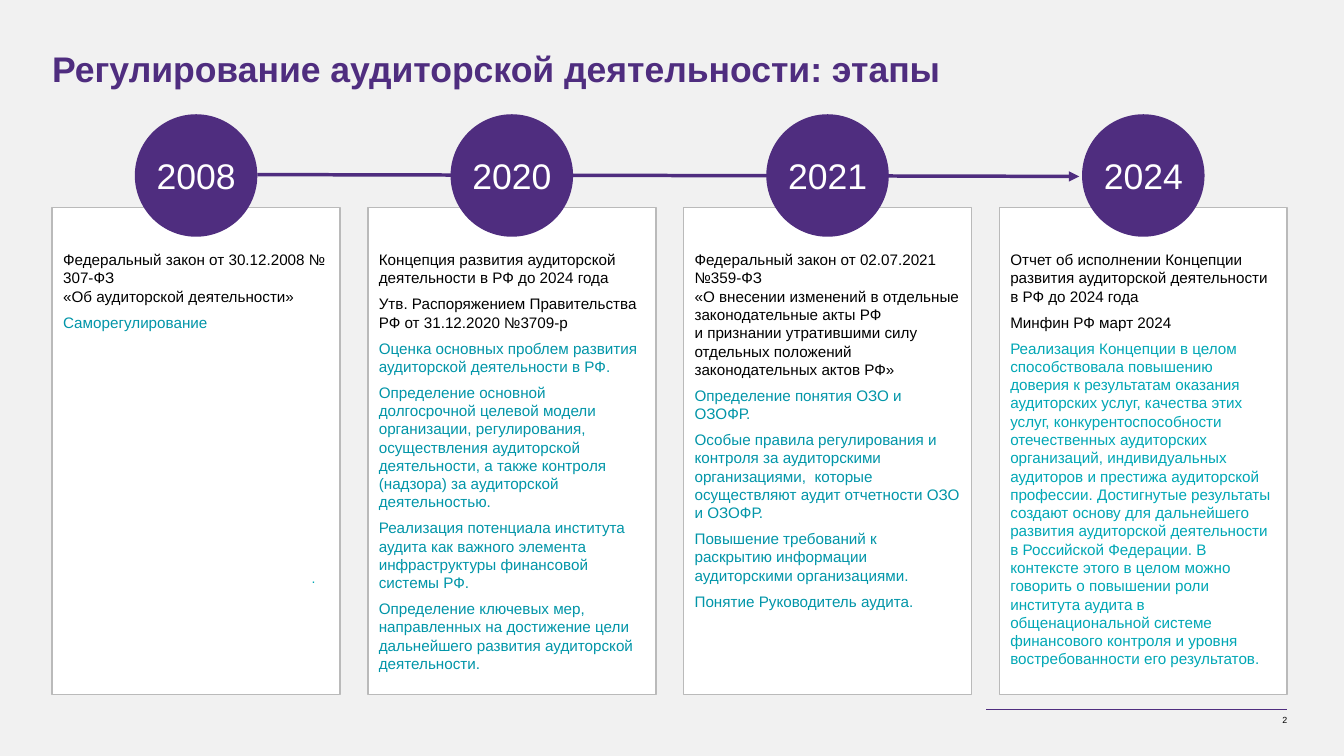
from copy import deepcopy

from pptx import Presentation
from pptx import util as u
from pptx.dml.color import RGBColor
from pptx.enum import shapes, text
from pptx.oxml import ns, xmlchemy

VIOLET, TEAL, AQUA = "4F2D7F", "0095A8", "00A7B5"
BLACK, WHITE, GREY, PAPER = "000000", "FFFFFF", "BABABA", "F1F1F1"

TITLE = "Регулирование аудиторской деятельности: этапы"
# year, black lines, coloured lines, their colour
STAGES = [
    ("2008",
     ["Федеральный закон от 30.12.2008 № 307-ФЗ\n«Об аудиторской деятельности»"],
     ["Саморегулирование"], TEAL),
    ("2020",
     ["Концепция развития аудиторской деятельности в РФ до 2024 года",
      "Утв. Распоряжением Правительства РФ от 31.12.2020 №3709-р"],
     ["Оценка основных проблем развития аудиторской деятельности в РФ.",
      "Определение основной долгосрочной целевой модели организации, "
      "регулирования, осуществления аудиторской деятельности, а также "
      "контроля (надзора) за аудиторской деятельностью.",
      "Реализация потенциала института аудита как важного элемента "
      "инфраструктуры финансовой системы РФ.",
      "Определение ключевых мер, направленных на достижение цели "
      "дальнейшего развития аудиторской деятельности."], TEAL),
    ("2021",
     ["Федеральный закон от 02.07.2021 №359-ФЗ\n«О внесении изменений в "
      "отдельные законодательные акты РФ\nи признании утратившими силу "
      "отдельных положений законодательных актов РФ»"],
     ["Определение понятия ОЗО и ОЗОФР.",
      "Особые правила регулирования и контроля за аудиторскими "
      "организациями,  которые осуществляют аудит отчетности ОЗО\nи ОЗОФР.",
      "Повышение требований к \nраскрытию информации\n"
      "аудиторскими организациями.",
      "Понятие Руководитель аудита."], TEAL),
    ("2024",
     ["Отчет об исполнении Концепции развития аудиторской деятельности "
      "в РФ до 2024 года",
      "Минфин РФ март 2024"],
     ["Реализация Концепции в целом способствовала повышению доверия к "
      "результатам оказания аудиторских услуг, качества этих услуг, "
      "конкурентоспособности отечественных аудиторских организаций, "
      "индивидуальных аудиторов и престижа аудиторской профессии. "
      "Достигнутые результаты создают основу для дальнейшего развития "
      "аудиторской деятельности в Российской Федерации. В контексте этого "
      "в целом можно говорить о повышении роли института аудита в "
      "общенациональной системе финансового контроля и уровня "
      "востребованности его результатов."], AQUA),
]

WIDE, HIGH = 14.7, 8.27
LEFT, RIGHT = 0.57, 14.08
CARD, TOP, TALL = 3.15, 2.27, 5.33
STEP = (RIGHT - LEFT - CARD) / (len(STAGES) - 1)
DISC, RISE = 1.34, 1.25
EDGE = (CARD - DISC) / 2


def rgb(code):
    return RGBColor.from_string(code)


def box(at):
    return [u.Inches(n) for n in at]


def write(frame, lines, size=12, bold=False, align="LEFT", anchor="TOP",
          pad=(0, 0, 0, 0), after=6, lead=None):
    """Fill a text frame with (text, colour) lines; pad is left, top, right, bottom."""
    frame.word_wrap = True
    frame.auto_size = text.MSO_AUTO_SIZE.NONE
    frame.vertical_anchor = getattr(text.MSO_ANCHOR, anchor)
    (frame.margin_left, frame.margin_top,
     frame.margin_right, frame.margin_bottom) = box(pad)
    for i, (words, hue) in enumerate(lines):
        para = frame.add_paragraph() if i else frame.paragraphs[0]
        para.text = words
        para.alignment = getattr(text.PP_ALIGN, align)
        para.space_before, para.space_after = u.Pt(0), u.Pt(after)
        if lead:
            para.line_spacing = u.Pt(lead)
        for run in para.runs:
            font = run.font
            font.name, font.size, font.bold = "Arial", u.Pt(size), bold
            font.color.rgb = rgb(hue)
        # line breaks take the size of the text around them
        for gap in para._p.findall(ns.qn("a:br")):
            gap.insert(0, deepcopy(para.runs[0]._r.rPr))


def shape(slide, kind, at, fill, line=None):
    item = slide.shapes.add_shape(kind, *box(at))
    item.shadow.inherit = False
    item.fill.solid()
    item.fill.fore_color.rgb = rgb(fill)
    if line:
        item.line.color.rgb, item.line.width = rgb(line), u.Pt(1.25)
    else:
        item.line.fill.background()
    return item


def rule(slide, ends, width, hue=VIOLET, arrow=False):
    item = slide.shapes.add_connector(shapes.MSO_CONNECTOR.STRAIGHT, *box(ends))
    item.line.color.rgb, item.line.width = rgb(hue), u.Pt(width)
    if arrow:
        tip = xmlchemy.OxmlElement("a:tailEnd")
        tip.set("type", "triangle")
        item.line._get_or_add_ln().append(tip)
    item._element.spPr.append(xmlchemy.OxmlElement("a:effectLst"))


def label(slide, at, words, hue, **style):
    item = slide.shapes.add_textbox(*box(at))
    write(item.text_frame, [(words, hue)], **style)


def main():
    deck = Presentation()
    deck.slide_width, deck.slide_height = box((WIDE, HIGH))
    slide = deck.slides.add_slide(deck.slide_layouts[5])
    slide.background.fill.solid()
    slide.background.fill.fore_color.rgb = rgb(PAPER)

    title = slide.shapes.title
    title.left, title.top, title.width, title.height = box(
        (LEFT, 0.51, RIGHT - LEFT, 0.6))
    write(title.text_frame, [(TITLE, VIOLET)], size=28, bold=True, after=0, lead=34)

    rule(slide, (10.79, 7.76, RIGHT, 7.76), 0.75)
    label(slide, (RIGHT - 0.5, 7.77, 0.5, 0.22), "2", BLACK, size=7,
          align="RIGHT", pad=(0, 0.05, 0, 0.05), after=0)

    start = LEFT + EDGE + DISC
    finish = LEFT + STEP * (len(STAGES) - 1) + EDGE - 0.03
    rule(slide, (start, 1.91, finish, 1.93), 2.75, arrow=True)

    for i, (year, facts, notes, hue) in enumerate(STAGES):
        x = LEFT + i * STEP
        card = shape(slide, shapes.MSO_SHAPE.RECTANGLE, (x, TOP, CARD, TALL), WHITE, GREY)
        lines = [(s, BLACK) for s in facts] + [(s, hue) for s in notes]
        write(card.text_frame, lines, pad=(0.12, 0.47, 0.12, 0.12))
        disc = shape(slide, shapes.MSO_SHAPE.OVAL, (x + EDGE, RISE, DISC, DISC), VIOLET)
        write(disc.text_frame, [(year, WHITE)], size=28, align="CENTER", anchor="MIDDLE")

    label(slide, (3.41, 6.23, 0.2, 0.19), ".", AQUA, size=11)
    deck.save("out.pptx")


if __name__ == "__main__":
    main()
